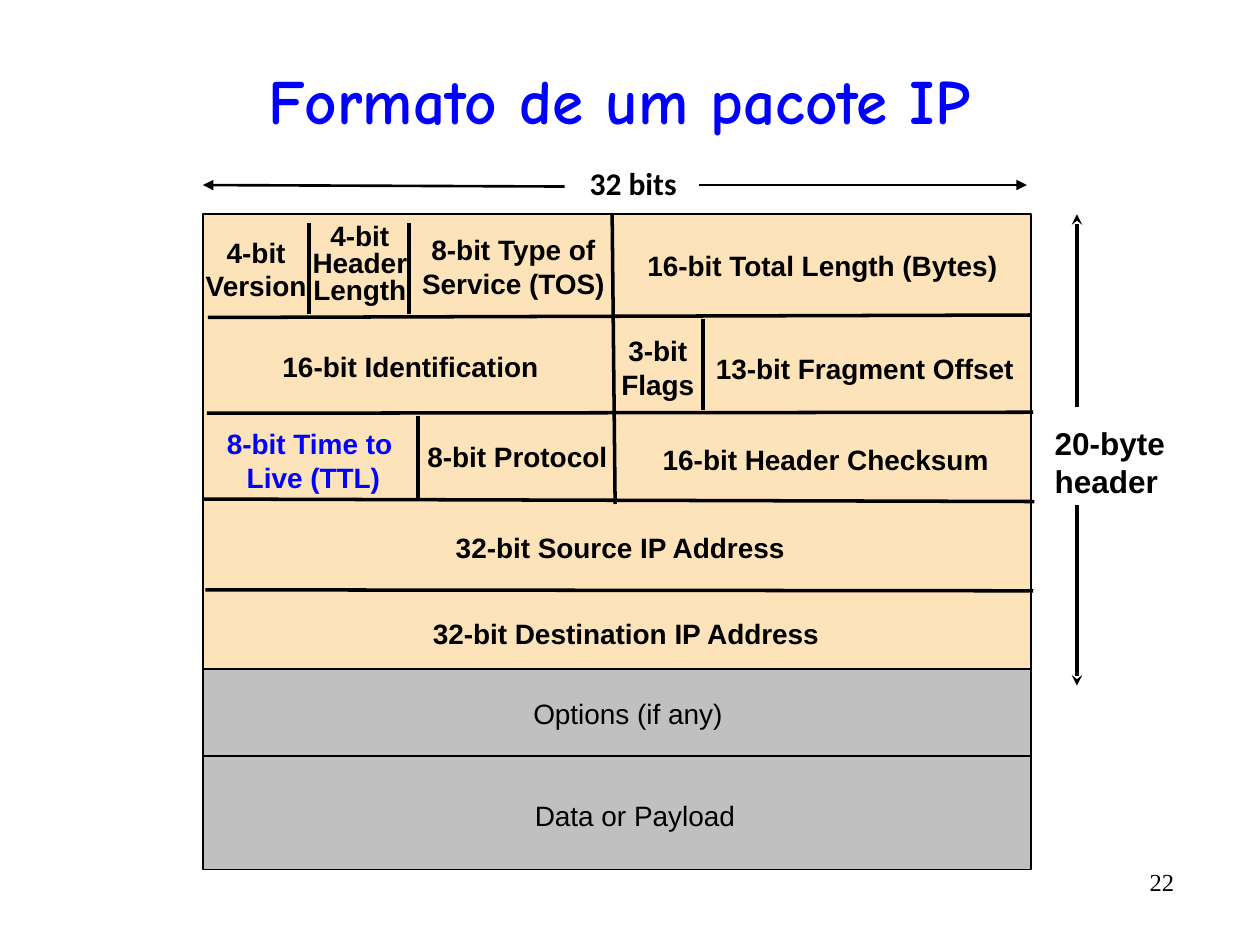
from typing import NamedTuple

import pptx
import pptx.dml.color
import pptx.enum.shapes
import pptx.enum.text
import pptx.oxml
import pptx.oxml.ns
import pptx.util

Cm = pptx.util.Cm
Pt = pptx.util.Pt
RGBColor = pptx.dml.color.RGBColor
Align = pptx.enum.text.PP_ALIGN
Anchor = pptx.enum.text.MSO_ANCHOR
Fit = pptx.enum.text.MSO_AUTO_SIZE

BLACK = RGBColor(0x00, 0x00, 0x00)
BLUE = RGBColor(0x00, 0x00, 0xFF)
CREAM = RGBColor(0xFD, 0xE3, 0xBA)
GRAY = RGBColor(0xC0, 0xC0, 0xC0)


class Band(NamedTuple):
    top: float
    height: float
    fill: RGBColor


class Rule(NamedTuple):
    x1: float
    y1: float
    x2: float
    y2: float
    width: float = 2
    tip: str = ""


class Label(NamedTuple):
    text: str
    left: float
    top: float
    width: float
    size: float = 16
    bold: bool = True
    color: RGBColor = BLACK
    font: str = "Arial"
    align: Align = Align.CENTER
    pitch: float = 1.0
    grow: bool = True


LEFT, WIDE = 4.1, 16.68

BANDS = [
    Band(4.32, 9.19, CREAM),
    Band(13.49, 1.75, GRAY),
    Band(15.24, 2.29, GRAY),
]

RULES = [
    # Between rows
    Rule(4.19, 6.4, 20.8, 6.35),
    Rule(4.17, 8.33, 20.83, 8.31),
    Rule(4.11, 10.06, 20.85, 10.11),
    Rule(4.14, 11.89, 20.83, 11.91),
    # Between fields
    Rule(12.34, 4.32, 12.4, 10.16),
    Rule(8.25, 4.5, 8.25, 6.32),
    Rule(6.23, 4.5, 6.23, 6.32),
    Rule(14.17, 6.43, 14.17, 8.26),
    Rule(8.43, 8.38, 8.43, 10.03),
    # Size arrows
    Rule(21.71, 8.2, 21.71, 4.32, tip="stealth"),
    Rule(21.71, 10.19, 21.71, 13.82, tip="stealth"),
    Rule(14.1, 3.73, 20.7, 3.73, 1.5, "triangle"),
    Rule(11.38, 3.76, 4.09, 3.73, 1.5, "triangle"),
]

LABELS = [
    Label("4-bit\nVersion", 3.88, 4.62, 2.57),
    Label("4-bit\nHeader\nLength", 6.05, 4.42, 2.41, pitch=0.8),
    Label("8-bit Type of\nService (TOS)", 8.24, 4.57, 4.22),
    Label("16-bit Total Length (Bytes)", 12.77, 4.89, 7.62),
    Label("16-bit Identification", 5.43, 6.92, 5.69),
    Label("3-bit\nFlags", 12.27, 6.6, 1.98),
    Label("13-bit Fragment Offset", 14.17, 6.96, 6.53),
    Label("8-bit Time to \nLive (TTL)", 4.3, 8.48, 4.04, color=BLUE),
    Label("8-bit Protocol", 8.36, 8.74, 4.14),
    Label("16-bit Header Checksum", 13.1, 8.79, 7.09),
    Label("32-bit Source IP Address", 8.91, 10.57, 7.19),
    Label("32-bit Destination IP Address", 8.44, 12.31, 8.36),
    Label("Options (if any)", 10.49, 13.92, 4.34, bold=False),
    Label("Data or Payload", 10.5, 15.98, 4.6, bold=False),
    Label("20-byte\nheader", 21.01, 8.43, 2.74, 18, align=Align.LEFT),
    Label("32 bits", 11.62, 3.18, 2.29, 18, font="Calibri"),
    Label("22", 21.38, 17.35, 2.54, 14, False,
          font="Times New Roman", align=Align.RIGHT, grow=False),
]


def draw_band(slide, band: Band) -> None:
    shape = slide.shapes.add_shape(
        pptx.enum.shapes.MSO_SHAPE.RECTANGLE,
        Cm(LEFT), Cm(band.top), Cm(WIDE), Cm(band.height))
    shape.shadow.inherit = False
    shape.fill.solid()
    shape.fill.fore_color.rgb = band.fill
    shape.line.color.rgb = BLACK
    shape.line.width = Pt(1)


def draw_rule(slide, rule: Rule) -> None:
    line = slide.shapes.add_connector(
        pptx.enum.shapes.MSO_CONNECTOR.STRAIGHT,
        Cm(rule.x1), Cm(rule.y1), Cm(rule.x2), Cm(rule.y2))
    line.line.color.rgb = BLACK
    line.line.width = Pt(rule.width)
    props = line._element.spPr
    if rule.tip:
        tail = pptx.oxml.parse_xml(
            f'<a:tailEnd {pptx.oxml.ns.nsdecls("a")} type="{rule.tip}"/>')
        line.line._get_or_add_ln().append(tail)
    props.append(pptx.oxml.parse_xml(
        f'<a:effectLst {pptx.oxml.ns.nsdecls("a")}/>'))


def draw_label(slide, label: Label) -> None:
    """Add a text box whose height follows its lines of text."""
    lines = label.text.count("\n") + 1
    height = 0.25 + 0.0425 * label.size * lines * label.pitch
    box = slide.shapes.add_textbox(
        Cm(label.left), Cm(label.top), Cm(label.width), Cm(height))
    frame = box.text_frame
    frame.word_wrap = not label.grow
    frame.auto_size = Fit.SHAPE_TO_FIT_TEXT if label.grow else Fit.NONE
    frame.text = label.text
    for para in frame.paragraphs:
        para.alignment = label.align
        para.line_spacing = label.pitch
        set_font(para.font, label.font, label.size, label.bold, label.color)


def set_font(font, name: str, size: float, bold: bool, color: RGBColor) -> None:
    font.name = name
    font.size = Pt(size)
    font.bold = bold
    font.color.rgb = color


def draw_title(slide, text: str) -> None:
    title = slide.shapes.title
    title.left, title.top = Cm(0.84), Cm(1.06)
    title.width, title.height = Cm(23.29), Cm(1.9)
    frame = title.text_frame
    frame.text = text
    frame.vertical_anchor = Anchor.MIDDLE
    para = frame.paragraphs[0]
    para.alignment = Align.CENTER
    set_font(para.font, "Comic Neue", 36, True, BLUE)


def main() -> None:
    deck = pptx.Presentation()
    deck.slide_width, deck.slide_height = Cm(25.4), Cm(19.05)
    slide = deck.slides.add_slide(deck.slide_layouts[5])
    draw_title(slide, "Formato de um pacote IP")
    for band in BANDS:
        draw_band(slide, band)
    for rule in RULES:
        draw_rule(slide, rule)
    for label in LABELS:
        draw_label(slide, label)
    deck.save("out.pptx")


if __name__ == "__main__":
    main()
